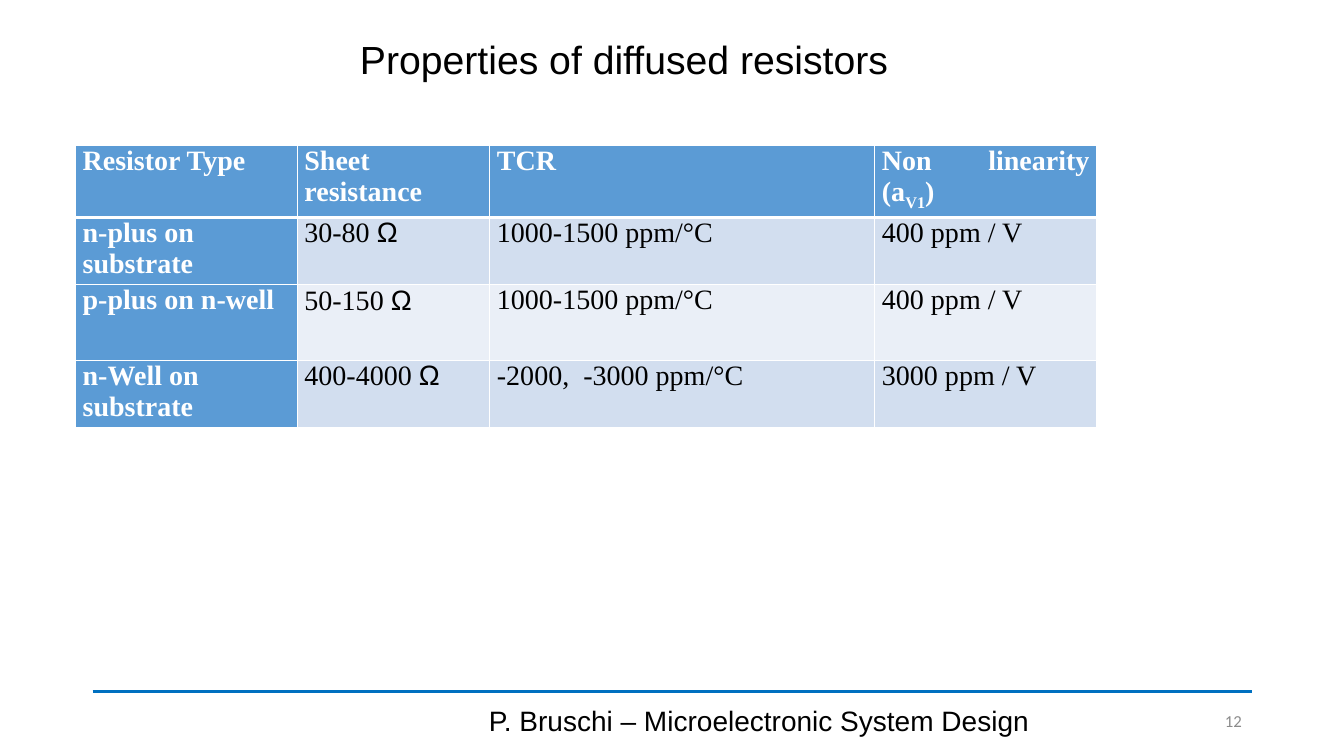
from lxml import etree
from pptx import Presentation
from pptx.dml.color import RGBColor
from pptx.enum import shapes, text
from pptx.oxml import ns
from pptx.util import Pt

BLACK, WHITE, GREY, RULE_BLUE = "000000", "FFFFFF", "8C8C8C", "0070C0"
HEADER_FILL, BAND_FILLS = "5B9BD5", ("D2DEEF", "EAEFF7")
ALIGN = text.PP_ALIGN

COLUMN_WIDTHS = (158.4, 137.52, 275.04, 158.4)
ROW_HEIGHTS = (37.44, 37.44, 54, 37.44)
OHM = ("Ω", {"name": "Arial"})
SUBSCRIPT = ("V1", {"baseline": -25000})
RESISTORS = [
    [["Resistor Type"], ["Sheet resistance"], ["TCR"], ["Non linearity (a", SUBSCRIPT, ")"]],
    [["n-plus on substrate"], ["30-80 ", OHM], ["1000-1500 ppm/°C"], ["400 ppm / V"]],
    [["p-plus on n-well"], ["50-150 ", OHM], ["1000-1500 ppm/°C"], ["400 ppm / V"]],
    [["n-Well on substrate"], ["400-4000 ", OHM], ["-2000,  -3000 ppm/°C"], ["3000 ppm / V"]],
]


def color(value):
    return RGBColor.from_string(value)


def write_runs(paragraph, runs, **base):
    """Add runs, each a string or a (string, overrides) pair, in the base format."""
    for item in runs:
        words, overrides = (item, {}) if isinstance(item, str) else item
        run = paragraph.add_run()
        run.text = words
        for key, value in {**base, **overrides}.items():
            if key == "color":
                run.font.color.rgb = color(value)
            elif key == "baseline":
                run.font._element.set("baseline", str(value))
            else:
                setattr(run.font, key, Pt(value) if key == "size" else value)


def add_label(slide, box, words, align, line_spacing=1.0, **font):
    shape = slide.shapes.add_textbox(*map(Pt, box))
    frame = shape.text_frame
    frame.word_wrap = True
    frame.vertical_anchor = text.MSO_ANCHOR.MIDDLE
    paragraph = frame.paragraphs[0]
    paragraph.alignment = align
    paragraph.line_spacing = line_spacing
    write_runs(paragraph, [words], **font)


def set_borders(cell, bottom):
    """Draw white borders, 1 pt except for the bottom one."""
    properties = cell._tc.get_or_add_tcPr()
    for side, width in {"L": 1, "R": 1, "T": 1, "B": bottom}.items():
        line = etree.SubElement(properties, ns.qn(f"a:ln{side}"), w=str(Pt(width)))
        fill = etree.SubElement(line, ns.qn("a:solidFill"))
        etree.SubElement(fill, ns.qn("a:srgbClr"), val=WHITE)


def fill_cell(cell, runs, row, column):
    is_header = row == 0 or column == 0
    set_borders(cell, bottom=3 if row == 0 else 1)
    cell.fill.solid()
    cell.fill.fore_color.rgb = color(HEADER_FILL if is_header else BAND_FILLS[(row - 1) % 2])
    margins = {"margin_left": 5.04, "margin_right": 5.04, "margin_top": 0, "margin_bottom": 0}
    for name, value in margins.items():
        setattr(cell, name, Pt(value))
    paragraph = cell.text_frame.paragraphs[0]
    paragraph.alignment = ALIGN.LEFT if row and column == 0 else ALIGN.JUSTIFY
    paragraph.space_after = Pt(6)
    write_runs(paragraph, runs, name="Times New Roman", size=20, bold=is_header,
               color=WHITE if is_header else BLACK)


def add_resistor_table(slide, left, top):
    box = (left, top, sum(COLUMN_WIDTHS), sum(ROW_HEIGHTS))
    table = slide.shapes.add_table(len(ROW_HEIGHTS), len(COLUMN_WIDTHS), *map(Pt, box)).table
    table.first_col = True
    for column, width in zip(table.columns, COLUMN_WIDTHS):
        column.width = Pt(width)
    for row, height in zip(table.rows, ROW_HEIGHTS):
        row.height = Pt(height)
    for r, cells in enumerate(RESISTORS):
        for c, runs in enumerate(cells):
            fill_cell(table.cell(r, c), runs, r, c)


def add_footer(slide, left, top, width):
    """Place the rule with the course name and the page number below it."""
    rule = slide.shapes.add_connector(
        shapes.MSO_CONNECTOR.STRAIGHT, Pt(left), Pt(top), Pt(left + width), Pt(top))
    rule.line.color.rgb = color(RULE_BLUE)
    rule.line.width = Pt(2.75)
    etree.SubElement(rule._element.spPr, ns.qn("a:effectLst"))
    add_label(slide, (left + 252, top + 6.5, 447.84, 28.8),
              "P. Bruschi – Microelectronic System Design", ALIGN.CENTER,
              name="Arial", size=20, color=BLACK)
    add_label(slide, (left + width - 69.12, top + 6.5, 69.12, 28.8), "12", ALIGN.RIGHT,
              name="Calibri", size=12, color=GREY)


def main():
    presentation = Presentation()
    presentation.slide_width, presentation.slide_height = Pt(960), Pt(540)
    slide = presentation.slides.add_slide(presentation.slide_layouts[6])
    add_label(slide, (31.68, 18, 828, 51.84), "Properties of diffused resistors",
              ALIGN.CENTER, 0.9, name="Arial", size=28, color=BLACK)
    add_resistor_table(slide, 54, 103.95)
    add_footer(slide, 66.24, 493.9, 828)
    presentation.save("out.pptx")


if __name__ == "__main__":
    main()
